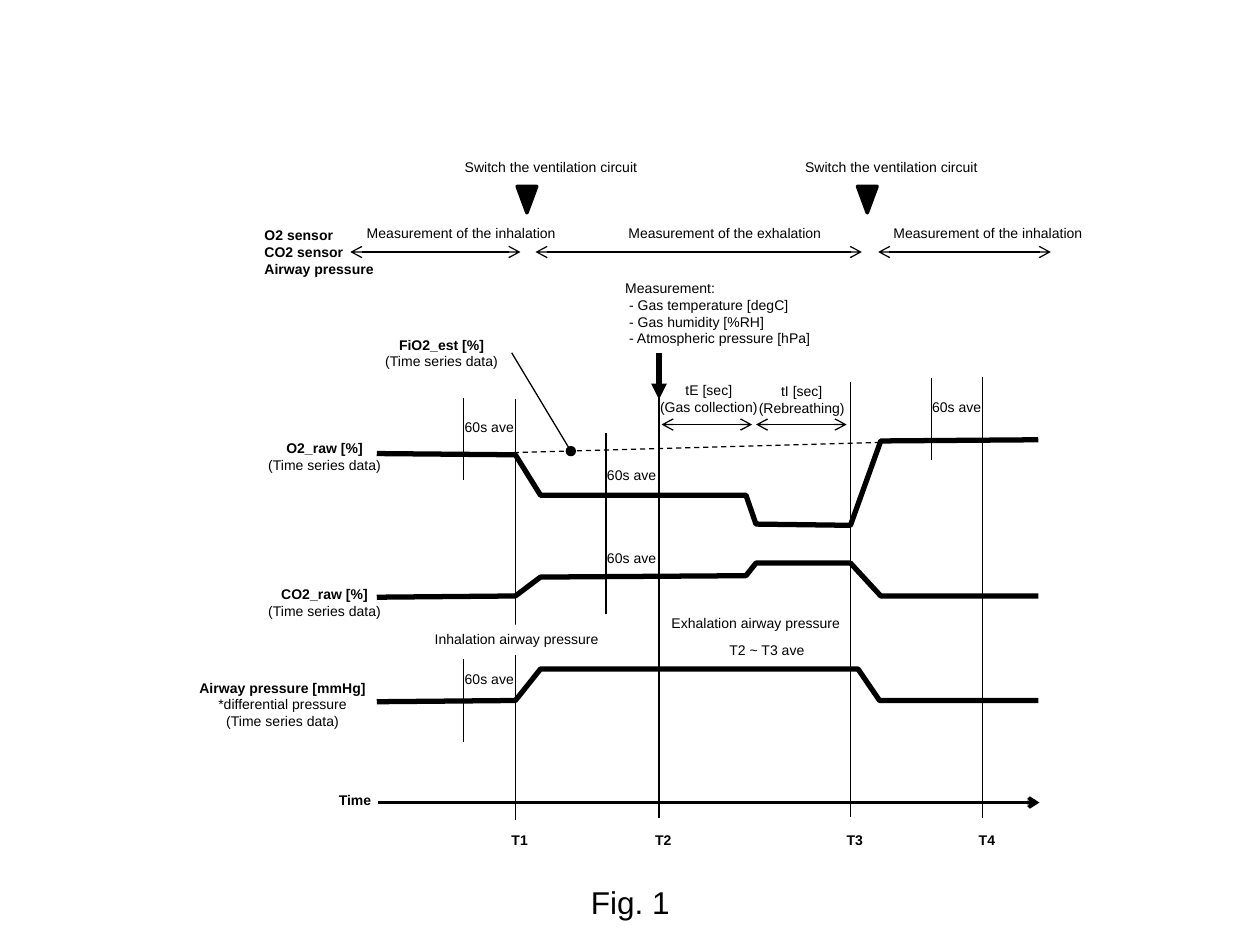
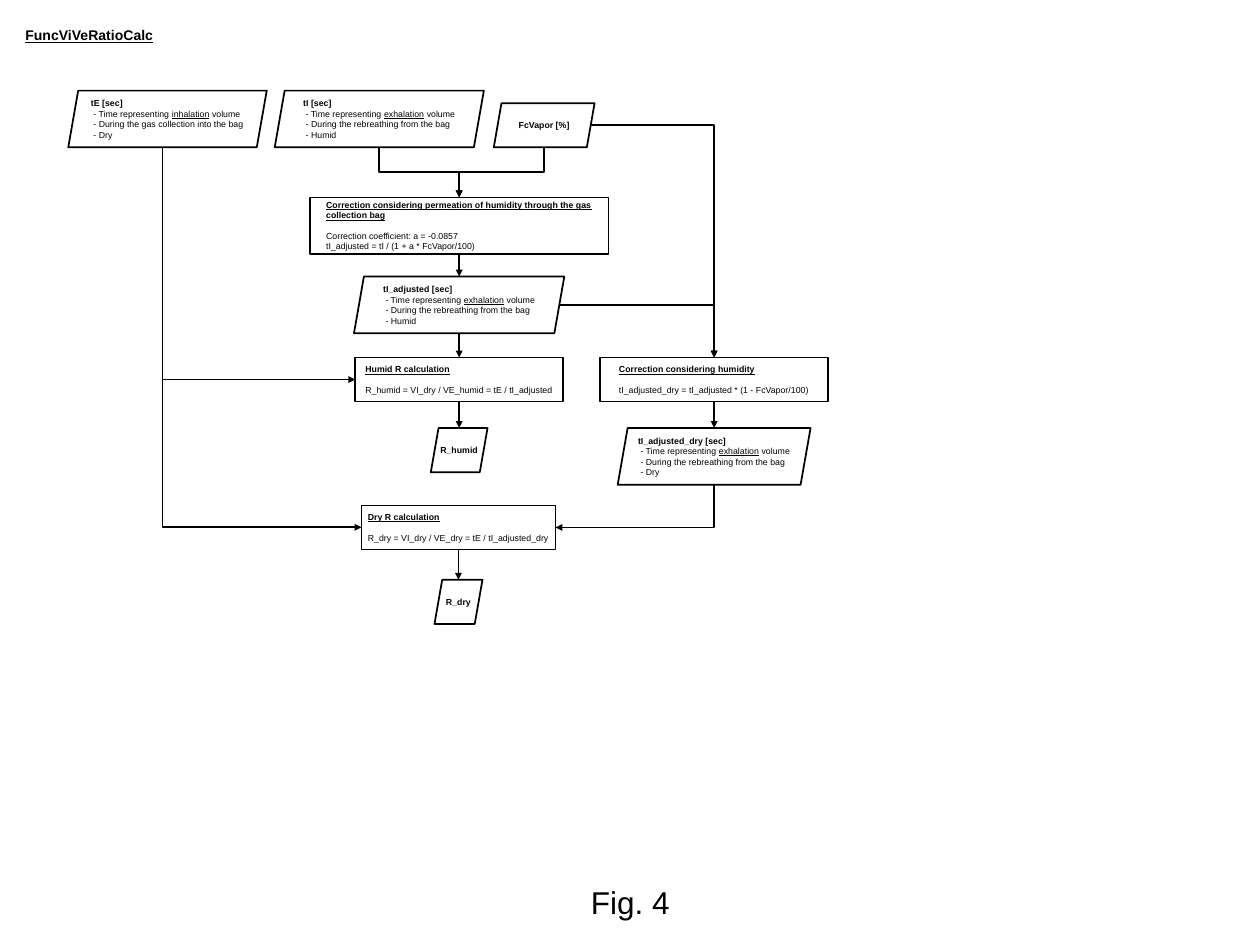
"""Build two figure slides: a ventilation time chart and a ratio calculation flow chart."""
from dataclasses import dataclass

from lxml.etree import SubElement
from pptx import Presentation
from pptx.dml.color import RGBColor
from pptx.enum.dml import MSO_LINE
from pptx.enum.shapes import MSO_CONNECTOR, MSO_SHAPE
from pptx.enum.text import MSO_ANCHOR, MSO_AUTO_SIZE, PP_ALIGN
from pptx.oxml.ns import qn
from pptx.util import Pt


@dataclass(frozen=True)
class Theme:
    """Hold the colours, font, type sizes and line widths of both slides."""
    ink: RGBColor = RGBColor(0, 0, 0)
    paper: RGBColor = RGBColor(255, 255, 255)
    font: str = "Arial"
    caption: float = 18
    label: float = 8
    flow: float = 5
    thin: float = 0.75
    outline: float = 1
    axis: float = 2
    thick: float = 3
    slant: float = 0.175


THEME = Theme()
BOLD = {"bold": True}
UNDERLINE = {"underline": True}
HEADING = {**BOLD, **UNDERLINE}


def plain(*texts):
    """Return one unformatted line for each text."""
    return [[(text, {})] for text in texts]


def styled(text, style):
    """Return a list holding one formatted line."""
    return [[(text, style)]]


def write(frame, lines, size, alignment=PP_ALIGN.LEFT):
    """Write lines of formatted pieces into a text frame."""
    for index, line in enumerate(lines):
        paragraph = frame.paragraphs[0] if index == 0 else frame.add_paragraph()
        paragraph.alignment = alignment
        for text, style in line:
            run = paragraph.add_run()
            run.text = text
            values = {"name": THEME.font, "size": Pt(size), "bold": False, **style}
            for name, value in values.items():
                setattr(run.font, name, value)
            run.font.color.rgb = THEME.ink


def fit_to_text(frame):
    """Make a frame hug its unwrapped text."""
    values = {"word_wrap": False, "auto_size": MSO_AUTO_SIZE.SHAPE_TO_FIT_TEXT,
              "vertical_anchor": MSO_ANCHOR.TOP}
    for name, value in values.items():
        setattr(frame, name, value)


def style_line(line, width):
    """Give a line the ink colour and a width."""
    line.color.rgb = THEME.ink
    line.width = Pt(width)


@dataclass
class Region:
    """Place parts relative to the top left corner of a box."""
    slide: object
    left: float
    top: float

    def place(self, x, y):
        """Turn a relative point into slide lengths."""
        return Pt(self.left + x), Pt(self.top + y)

    def label(self, lines, x, y, width, alignment=PP_ALIGN.LEFT):
        """Add a text box sized by its number of lines."""
        height = 8 + 9.3 * len(lines)
        shape = self.slide.shapes.add_textbox(*self.place(x, y), Pt(width), Pt(height))
        fit_to_text(shape.text_frame)
        write(shape.text_frame, lines, THEME.label, alignment)
        return shape

    def shape(self, kind, x, y, width, height, fill, line_width):
        """Add a filled preset shape."""
        shape = self.slide.shapes.add_shape(kind, *self.place(x, y), Pt(width), Pt(height))
        shape.shadow.inherit = False
        shape.fill.solid()
        shape.fill.fore_color.rgb = fill
        style_line(shape.line, line_width)
        return shape

    def line(self, start, end, width=THEME.thin, head=None, tail=None, kind=MSO_CONNECTOR.STRAIGHT,
             head_size="med"):
        """Add a connector with optional arrowheads."""
        connector = self.slide.shapes.add_connector(kind, *self.place(*start), *self.place(*end))
        style_line(connector.line, width)
        properties = connector._element.spPr
        for tag, arrowhead in (("a:headEnd", head), ("a:tailEnd", tail)):
            if arrowhead:
                SubElement(properties.find(qn("a:ln")), qn(tag), type=arrowhead, w=head_size, len=head_size)
        SubElement(properties, qn("a:effectLst"))
        return connector

    def flow_arrow(self, start, end, kind=MSO_CONNECTOR.STRAIGHT):
        """Add a flow chart arrow with a small head."""
        return self.line(start, end, THEME.outline, tail="triangle", kind=kind, head_size="sm")

    def elbow(self, start, end, preset, vertical_first):
        """Add a bent arrow that leaves its start vertically or horizontally."""
        connector = self.flow_arrow(start, end, MSO_CONNECTOR.ELBOW)
        properties = connector._element.spPr
        properties.find(qn("a:prstGeom")).set("prst", preset)
        if not vertical_first:
            return
        across, down = end[0] - start[0], end[1] - start[1]
        middle = (start[0] + end[0]) / 2, (start[1] + end[1]) / 2
        connector.left, connector.top = self.place(middle[0] - down / 2, middle[1] - abs(across) / 2)
        connector.width, connector.height = Pt(down), Pt(abs(across))
        transform = properties.find(qn("a:xfrm"))
        transform.set("rot", str((270 if across > 0 else 90) * 60000))
        transform.set("flipH", "1" if across > 0 else "0")

    def trace(self, points):
        """Draw a thick open signal curve."""
        placed = [self.place(*point) for point in points]
        builder = self.slide.shapes.build_freeform(*placed[0], scale=1.0)
        builder.add_line_segments(placed[1:], close=False)
        shape = builder.convert_to_shape()
        shape.shadow.inherit = False
        shape.fill.background()
        style_line(shape.line, THEME.thick)


def add_figure(presentation, caption):
    """Add a slide whose title is the figure caption at the foot."""
    slide = presentation.slides.add_slide(presentation.slide_layouts[5])
    title = slide.shapes.title
    values = {"left": Pt(330.5), "top": Pt(501), "width": Pt(60), "height": Pt(29)}
    for name, value in values.items():
        setattr(title, name, value)
    fit_to_text(title.text_frame)
    write(title.text_frame, plain(caption), THEME.caption)
    return slide


def draw_phases(region):
    """Draw the circuit switches and the measured phases."""
    for x in (114.5, 309):
        region.label(plain("Switch the ventilation circuit"), x, 0, 116)
        region.shape(MSO_SHAPE.FLOWCHART_MERGE, x + 37, 19.5, 11.2, 15.1, THEME.ink, THEME.axis)
    for phase, start, end, x in (("inhalation", 56.2, 153.4, 58.5), ("exhalation", 162, 348.5, 208),
                                 ("inhalation", 357.8, 456.5, 359.5)):
        region.line((start, 57), (end, 57), head="arrow", tail="arrow")
        region.label(plain(f"Measurement of the {phase}"), x, 37.5, 128)
    sensors = ("O2 sensor", "CO2 sensor", "Airway pressure")
    region.label([[(sensor, BOLD)] for sensor in sensors], 0, 39, 78.5)


def draw_time_axis(region):
    """Draw the time arrow and the event lines T1 to T4."""
    region.label(styled("Time", BOLD), 0, 233.6, 34)
    region.line((29.5, 243.6), (407.5, 243.6), THEME.axis, tail="arrow")
    events = ((108, 13.2, 253.7), (190, 1.7, 252.3), (299.5, 3.2, 251.6), (375, 0.3, 252.3))
    for number, (x, top, bottom) in enumerate(events, 1):
        region.line((x, top), (x, bottom))
        region.label(styled(f"T{number}", BOLD), x - 9.3, 256.6, 24)


def draw_traces(region):
    """Draw the three measured signals with their names and averages."""
    plot = Region(region.slide, region.left + 108.8, region.top)
    estimate = plot.line((57.6, 44.2), (341.3, 36.3))
    estimate.line.dash_style = MSO_LINE.DASH
    gas_times = (0, 79.2, 93.6, 211, 216.7, 270.7, 288, 378)
    pressure_times = (0, 79.2, 93.6, 275, 287.3, 378)
    series = "(Time series data)"
    signals = (
        ("O2_raw [%]", (series,), 39, 32.7, 80, gas_times,
         (44.2, 44.9, 68, 68, 84.5, 85.2, 37, 36.3)),
        ("CO2_raw [%]", (series,), 39, 116.2, 80, gas_times,
         (126.3, 125.6, 114.8, 114, 106.8, 106.8, 125.6, 125.6)),
        ("Airway pressure [mmHg]", ("*differential pressure", series), 0, 169.5, 110, pressure_times,
         (186, 185.3, 167.3, 167.3, 185.3, 185.3)))
    for name, details, x, y, width, times, levels in signals:
        plot.trace(list(zip(times, levels)))
        region.label(styled(name, BOLD) + plain(*details), x, y, width, PP_ALIGN.CENTER)
    averages = ((49.7, 12.5, 59.3, (20.4,)), (316.8, 1, 47.8, (9,)),
                (131, 32.7, 135.6, (47.8, 95.3)), (49.7, 161.6, 209, (164.4,)))
    for x, top, bottom, label_tops in averages:
        plot.line((x, top), (x, bottom))
        for label_top in label_tops:
            plot.label(plain("60s ave"), x - 6.5, label_top, 44)
    plot.label(plain("T2 ~ T3 ave"), 194.4, 148, 59)
    plot.label(plain("Exhalation airway pressure"), 161.3, 132.8, 114)
    inhalation = plot.label(plain("Inhalation airway pressure"), 26, 142, 111)
    inhalation.fill.solid()
    inhalation.fill.fore_color.rgb = THEME.paper


def draw_annotations(region):
    """Draw the gas measurement note, the estimate callout and the time spans."""
    region.label(plain("Measurement:", " - Gas temperature [degC]", " - Gas humidity [%RH]",
                       " - Atmospheric pressure [hPa]"), 137.8, 0, 123)
    region.line((164.2, 45.4), (164.2, 72), THEME.thick, tail="triangle")
    region.label(styled("FiO2_est [%]", BOLD) + plain("(Time series data)"), 0, 32.4, 80, PP_ALIGN.CENTER)
    region.line((80, 45.4), (113.8, 101.6), tail="oval")
    for name, purpose, x, y, width, start in (("tE [sec]", "(Gas collection)", 157, 58.4, 71.3, 165.6),
                                              ("tI [sec]", "(Rebreathing)", 213.8, 59, 64, 219.6)):
        region.label(plain(name, purpose), x, y, width, PP_ALIGN.CENTER)
        region.line((start, 86.4), (start + 51.8, 86.4), head="arrow", tail="arrow")


def volume_lines(name, volume, action, state):
    """Return the lines that describe a measured time."""
    volume_line = [(" - Time representing ", {}), (volume, UNDERLINE), (" volume", {})]
    return styled(name, BOLD) + [volume_line] + plain(f" - During the {action} the bag", f" - {state}")


def port(box, side):
    """Return the point on a box where an arrow meets it."""
    x, y, width, height = box
    slope = THEME.slant * height / 2
    return {"top": (x + width / 2, y), "bottom": (x + width / 2, y + height),
            "bottom_edge": (x + width / 2 - slope, y + height), "left": (x, y + height / 2),
            "right": (x + width, y + height / 2), "slope": (x + width - slope, y + height / 2)}[side]


def draw_flow(region):
    """Draw the data and process boxes and the arrows between them."""
    data, process = MSO_SHAPE.PARALLELOGRAM, MSO_SHAPE.FLOWCHART_PROCESS
    tall, short = 32.4, 25.2
    rebreathing = "rebreathing from"
    nodes = {
        "tE": (data, (0, 0, 113.4, tall), volume_lines("tE [sec]", "inhalation", "gas collection into", "Dry")),
        "tI": (data, (118, 0, 119.5, tall), volume_lines("tI [sec]", "exhalation", rebreathing, "Humid")),
        "vapor": (data, (243.2, 7.2, 57.6, short), styled("FcVapor [%]", BOLD)),
        "permeation": (process, (138, 61, 170.8, tall),
                       styled("Correction considering permeation of humidity through the gas collection bag", HEADING)
                       + plain("Correction coefficient: a = -0.0857", "tI_adjusted = tI / (1 + a * FcVapor/100)")),
        "adjusted": (data, (163.3, 106.2, 120.2, tall),
                     volume_lines("tI_adjusted [sec]", "exhalation", rebreathing, "Humid")),
        "humid": (process, (164, 152.5, 118.8, short), styled("Humid R calculation", HEADING)
                  + plain("R_humid = VI_dry / VE_humid = tE / tI_adjusted")),
        "R_humid": (data, (207.2, 192.8, 32.4, short), styled("R_humid", BOLD)),
        "humidity": (process, (304, 152.5, 130.2, short), styled("Correction considering humidity", HEADING)
                     + plain("tI_adjusted_dry = tI_adjusted * (1 - FcVapor/100)")),
        "adjusted_dry": (data, (314, 192.8, 110.2, tall),
                         volume_lines("tI_adjusted_dry [sec]", "exhalation", rebreathing, "Dry")),
        "dry": (process, (167.6, 237, 110.8, short), styled("Dry R calculation", HEADING)
                + plain("R_dry = VI_dry / VE_dry = tE / tI_adjusted_dry")),
        "R_dry": (data, (209.3, 279.5, 27.4, short), styled("R_dry", BOLD))}
    for kind, box, lines in nodes.values():
        shape = region.shape(kind, *box, THEME.paper, THEME.outline)
        if kind == data:
            shape.adjustments[0] = THEME.slant
        frame = shape.text_frame
        values = {"word_wrap": True, "vertical_anchor": MSO_ANCHOR.MIDDLE, "margin_left": 0,
                  "margin_right": 0, "margin_top": 0, "margin_bottom": 0}
        for name, value in values.items():
            setattr(frame, name, value)
        frame._txBody.bodyPr.set("anchorCtr", "1")
        write(frame, lines, THEME.flow)
        if kind == process:
            frame.paragraphs[1].space_before = Pt(5.75)
    for start, end in (("permeation", "adjusted"), ("adjusted", "humid"), ("humid", "R_humid"),
                       ("humidity", "adjusted_dry"), ("dry", "R_dry")):
        region.flow_arrow(port(nodes[start][1], "bottom"), port(nodes[end][1], "top"))
    for start, start_side, end, end_side in (
            ("tI", "bottom", "permeation", "top"), ("vapor", "bottom", "permeation", "top"),
            ("tE", "bottom_edge", "humid", "left"), ("tE", "bottom_edge", "dry", "left"),
            ("adjusted", "slope", "humidity", "top"), ("vapor", "slope", "humidity", "top"),
            ("adjusted_dry", "bottom", "dry", "right")):
        vertical_first = start_side != "slope"
        preset = "bentConnector3" if vertical_first and end_side == "top" else "bentConnector2"
        region.elbow(port(nodes[start][1], start_side), port(nodes[end][1], end_side), preset, vertical_first)


def main():
    """Build both slides and save the presentation."""
    presentation = Presentation()
    presentation.slide_width, presentation.slide_height = Pt(720), Pt(540)
    time_chart = add_figure(presentation, "Fig. 1")
    draw_phases(Region(time_chart, 144, 87))
    draw_time_axis(Region(time_chart, 186.5, 215))
    draw_traces(Region(time_chart, 106.5, 215))
    draw_annotations(Region(time_chart, 212.4, 156.2))
    flow_chart = add_figure(presentation, "Fig. 4")
    Region(flow_chart, 7.4, 11.5).label(styled("FuncViVeRatioCalc", HEADING), 0, 0, 90)
    draw_flow(Region(flow_chart, 39, 51.8))
    presentation.save("out.pptx")


if __name__ == "__main__":
    main()
